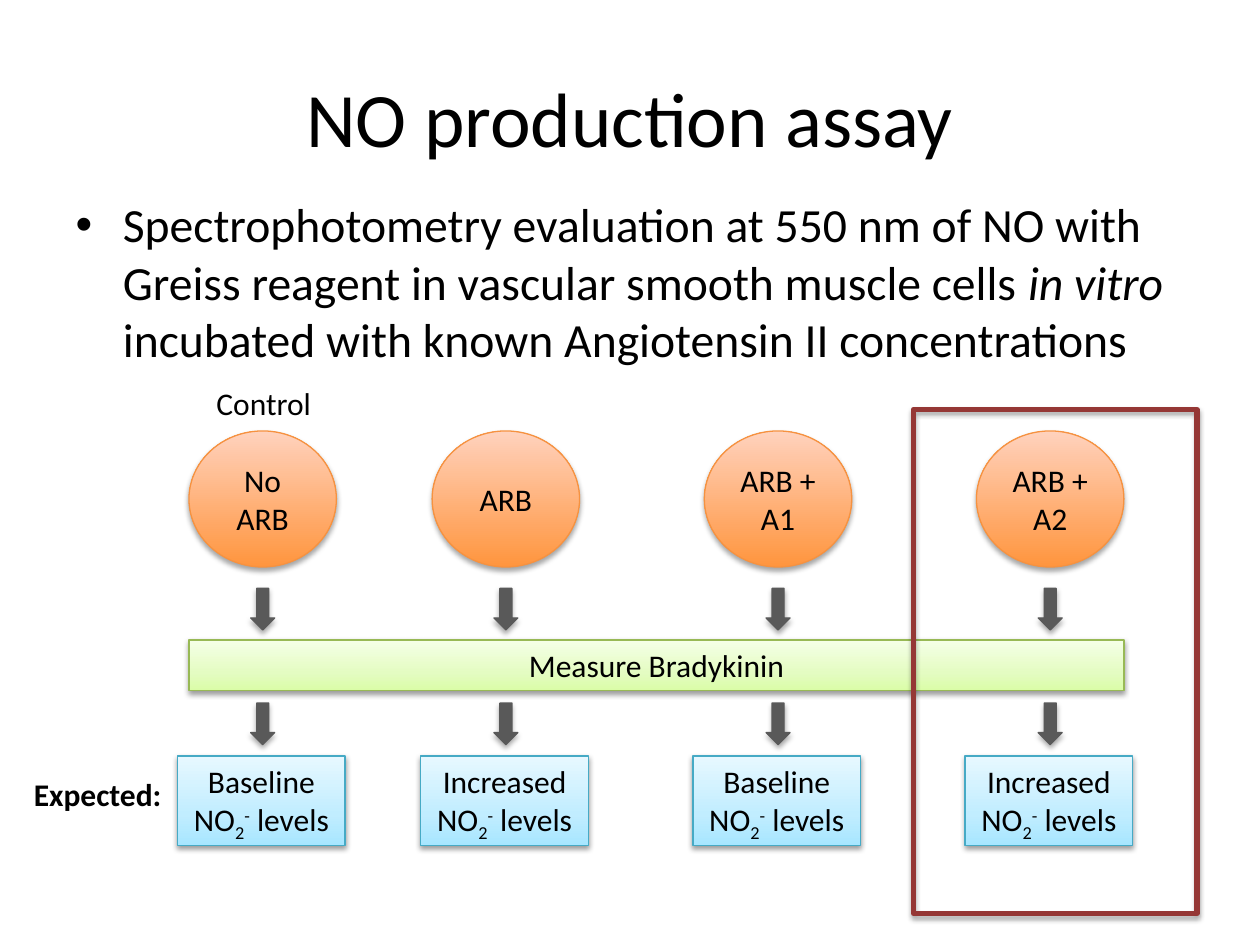
from copy import deepcopy
from lxml import etree
from pptx import Presentation
from pptx.dml.color import RGBColor as RGB
from pptx.enum.shapes import MSO_SHAPE as Kind
from pptx.enum.text import MSO_ANCHOR as Anchor, MSO_AUTO_SIZE as Fit, PP_ALIGN as Align
from pptx.oxml.ns import qn
from pptx.util import Inches, Pt

HUES = {
    "text": "000000", "arrow": "595959", "frame": "953735",
    "orange": ["FF953E", "FFD2BD"], "orange line": "F69240",
    "green": ["DAFDA7", "E4FCC2", "F5FFE7"], "green line": "98B955",
    "blue": ["A7E6FF", "C1EDFF", "E7F8FF"], "blue line": "46AAC5",
}

deck = Presentation()
deck.slide_width, deck.slide_height = Inches(10), Inches(7.5)
slide = deck.slides.add_slide(deck.slide_layouts[1])


def style(para, size=18, align=None):
    para.alignment = align
    for run in para.runs:
        run.font.name = "Calibri"
        run.font.size = Pt(size)
        run.font.color.rgb = RGB.from_string(HUES["text"])


def draw(kind, left, top, width, height, fill, line, weight=0.75, alpha=35, dist=1.8):
    shape = slide.shapes.add_shape(kind, *map(Inches, (left, top, width, height)))
    shape.line.color.rgb = RGB.from_string(HUES[line])
    shape.line.width = Pt(weight)
    if fill is None:
        shape.fill.background()
    elif isinstance(HUES[fill], str):
        shape.fill.solid()
        shape.fill.fore_color.rgb = RGB.from_string(HUES[fill])
    else:
        shape.fill.gradient()
        shape.fill.gradient_angle = 90
        tones = HUES[fill]
        if len(tones) == 3:
            first = shape._element.spPr.find(".//" + qn("a:gs"))
            first.addnext(deepcopy(first))
        spots = [0, 1] if len(tones) == 2 else [0, 0.35, 1]
        for stop, tone, spot in zip(shape.fill.gradient_stops, tones, spots):
            stop.color.rgb = RGB.from_string(tone)
            stop.position = spot
    shape.shadow.inherit = False
    effects = shape._element.spPr.find(qn("a:effectLst"))
    shade = etree.SubElement(effects, qn("a:outerShdw"), blurRad=str(Pt(3.1)),
                             dist=str(Pt(dist)), dir="5400000", rotWithShape="0")
    black = etree.SubElement(shade, qn("a:srgbClr"), val="000000")
    etree.SubElement(black, qn("a:alpha"), val=str(alpha * 1000))
    return shape


title = slide.shapes.title
title.left, title.top, title.width, title.height = map(Inches, (0.5, 0.3, 9, 1.25))
title.text_frame.text = "NO production assay"
title.text_frame.vertical_anchor = Anchor.MIDDLE
style(title.text_frame.paragraphs[0], 44, Align.CENTER)

body = slide.placeholders[1]
body.left, body.top, body.width, body.height = map(Inches, (0.5, 1.5, 9, 1.25))
body.text_frame.auto_size = Fit.NONE
para = body.text_frame.paragraphs[0]
for text in ("Spectrophotometry evaluation at 550 nm of NO with Greiss reagent "
             "in vascular smooth muscle cells ", "in vitro ",
             "incubated with known Angiotensin II concentrations"):
    para.add_run().text = text
style(para, 27.2)
para.runs[1].font.italic = True

bar = draw(Kind.RECTANGLE, 1.5, 5.08, 7.42, 0.4, "green", "green line", alpha=38, dist=1.6)
bar.text_frame.text = "Measure Bradykinin"
bar.text_frame.vertical_anchor = Anchor.TOP
style(bar.text_frame.paragraphs[0], align=Align.CENTER)

columns = [(2.08, "No ARB", "Baseline"), (4.01, "ARB", "Increased"),
           (6.17, "ARB + A1", "Baseline"), (8.33, "ARB + A2", "Increased")]
for mid, group, level in columns:
    cell = draw(Kind.OVAL, mid - 0.58, 3.42, 1.17, 1.08, "orange", "orange line")
    cell.text_frame.text = group
    cell.text_frame.vertical_anchor = Anchor.MIDDLE
    style(cell.text_frame.paragraphs[0], align=Align.CENTER)

    for top in (4.74, 5.65):
        arrow = draw(Kind.RIGHT_ARROW, mid - 0.16, top, 0.33, 0.19, "arrow", "arrow")
        arrow.rotation = 90

    box = draw(Kind.RECTANGLE, mid - 0.67, 6, 1.33, 0.71, "blue", "blue line",
               alpha=38, dist=1.6)
    box.text_frame.vertical_anchor = Anchor.TOP
    para = box.text_frame.paragraphs[0]
    for text, shift in ((level + " NO", 0), ("2", -25), ("-", 30), (" levels", 0)):
        run = para.add_run()
        run.text = text
        if shift:
            run.font._element.set("baseline", str(shift * 1000))
    style(para, align=Align.CENTER)

for text, left, top, width, bold in (("Control", 1.62, 3, 0.96, False),
                                     ("Expected:", 0.17, 6.1, 1.33, True)):
    label = slide.shapes.add_textbox(*map(Inches, (left, top, width, 0.4)))
    label.text_frame.word_wrap = bold
    label.text_frame.text = text
    style(label.text_frame.paragraphs[0])
    label.text_frame.paragraphs[0].runs[0].font.bold = bold

draw(Kind.RECTANGLE, 7.25, 3.25, 2.25, 4, None, "frame", weight=3)

deck.save("out.pptx")
